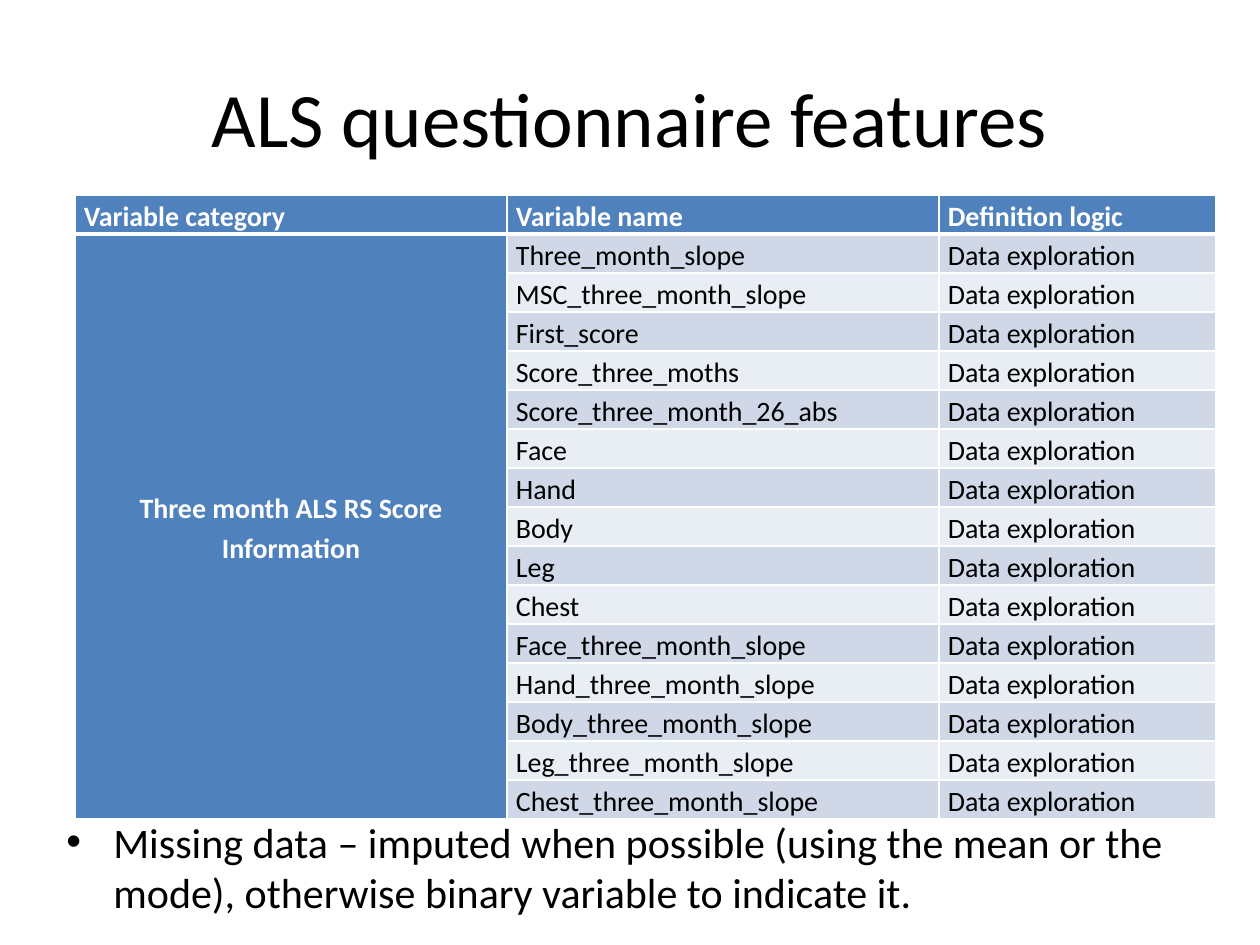
from lxml import etree
from pptx import Presentation
from pptx import util as u
from pptx.dml.color import RGBColor
from pptx.enum import text as t
from pptx.oxml import ns

FONT = "Calibri"
BLACK = RGBColor(0x00, 0x00, 0x00)
WHITE = RGBColor(0xFF, 0xFF, 0xFF)
BLUE = RGBColor(0x4F, 0x81, 0xBD)
BANDS = RGBColor(0xD0, 0xD8, 0xE8), RGBColor(0xE9, 0xED, 0xF4)

HEADS = ["Variable category", "Variable name", "Definition logic"]
GROUP = "Three month ALS RS Score Information"
LOGIC = "Data exploration"
PARTS = ["Face", "Hand", "Body", "Leg", "Chest"]
NAMES = [
    "Three_month_slope", "MSC_three_month_slope", "First_score",
    "Score_three_moths", "Score_three_month_26_abs",
    *PARTS, *[f"{part}_three_month_slope" for part in PARTS],
]
NOTE = ("Missing data – imputed when possible (using the mean or the mode), "
        "otherwise binary variable to indicate it.")


def px(n):
    return u.Emu(round(n * 914400 / 126))


def write(frame, words, size, color=BLACK, bold=False, align=t.PP_ALIGN.LEFT):
    """Fill a text frame with one styled paragraph and return it."""
    frame.text = words
    frame.word_wrap = True
    para = frame.paragraphs[0]
    para.alignment = align
    font = para.runs[0].font
    font.name, font.size, font.bold = FONT, u.Pt(size), bold
    font.color.rgb = color
    return para


def add_box(slide, box):
    return slide.shapes.add_textbox(*map(px, box)).text_frame


def add_title(slide, box):
    frame = add_box(slide, box)
    write(frame, "ALS questionnaire features", 44, align=t.PP_ALIGN.CENTER)
    frame.vertical_anchor = t.MSO_ANCHOR.MIDDLE


def add_note(slide, box):
    para = write(add_box(slide, box), NOTE, 24)
    para.space_before = u.Pt(5)
    props = para._p.get_or_add_pPr()
    props.set("marL", str(px(47)))
    props.set("indent", str(-px(47)))
    etree.SubElement(props, ns.qn("a:buFont"), typeface="Arial")
    etree.SubElement(props, ns.qn("a:buChar"), char="•")


def set_edges(cell, base):
    """Draw white cell borders, the bottom one base points wide."""
    props = cell._tc.get_or_add_tcPr()
    widths = {"L": 1, "R": 1, "T": 1, "B": base}
    for spot, (side, width) in enumerate(widths.items()):
        line = etree.Element(ns.qn(f"a:ln{side}"), w=str(u.Pt(width)))
        fill = etree.SubElement(line, ns.qn("a:solidFill"))
        etree.SubElement(fill, ns.qn("a:srgbClr"), val=str(WHITE))
        props.insert(spot, line)


def fill_cell(cell, words, row, col):
    head = row == 0
    strong = head or col == 0
    group = col == 0 and not head
    cell.margin_left = cell.margin_right = px(9)
    cell.margin_top = cell.margin_bottom = 0
    cell.fill.solid()
    cell.fill.fore_color.rgb = BLUE if strong else BANDS[(row - 1) % 2]
    set_edges(cell, 3 if head else 1)
    if words:
        para = write(cell.text_frame, words, 16,
                     WHITE if strong else BLACK, strong,
                     t.PP_ALIGN.CENTER if group else t.PP_ALIGN.LEFT)
        para.line_spacing = 1.15
    if group:
        cell.vertical_anchor = t.MSO_ANCHOR.MIDDLE


def add_grid(slide, box):
    rows = [HEADS] + [[GROUP if i == 0 else "", name, LOGIC]
                      for i, name in enumerate(NAMES)]
    grid = slide.shapes.add_table(len(rows), len(HEADS), *map(px, box)).table
    wide = 432
    for col, width in zip(grid.columns, [wide, wide, box[2] - 2 * wide]):
        col.width = px(width)
    for r, row in enumerate(rows):
        for c, words in enumerate(row):
            fill_cell(grid.cell(r, c), words, r, c)
    grid.cell(1, 0).merge(grid.cell(len(NAMES), 0))


def main():
    deck = Presentation()
    deck.slide_width, deck.slide_height = px(1260), px(945)
    slide = deck.slides.add_slide(deck.slide_layouts[6])
    add_title(slide, (63, 38, 1134, 157))
    add_grid(slide, (75, 195, 1141, 624))
    add_note(slide, (54, 810, 1134, 135))
    deck.save("out.pptx")


if __name__ == "__main__":
    main()
